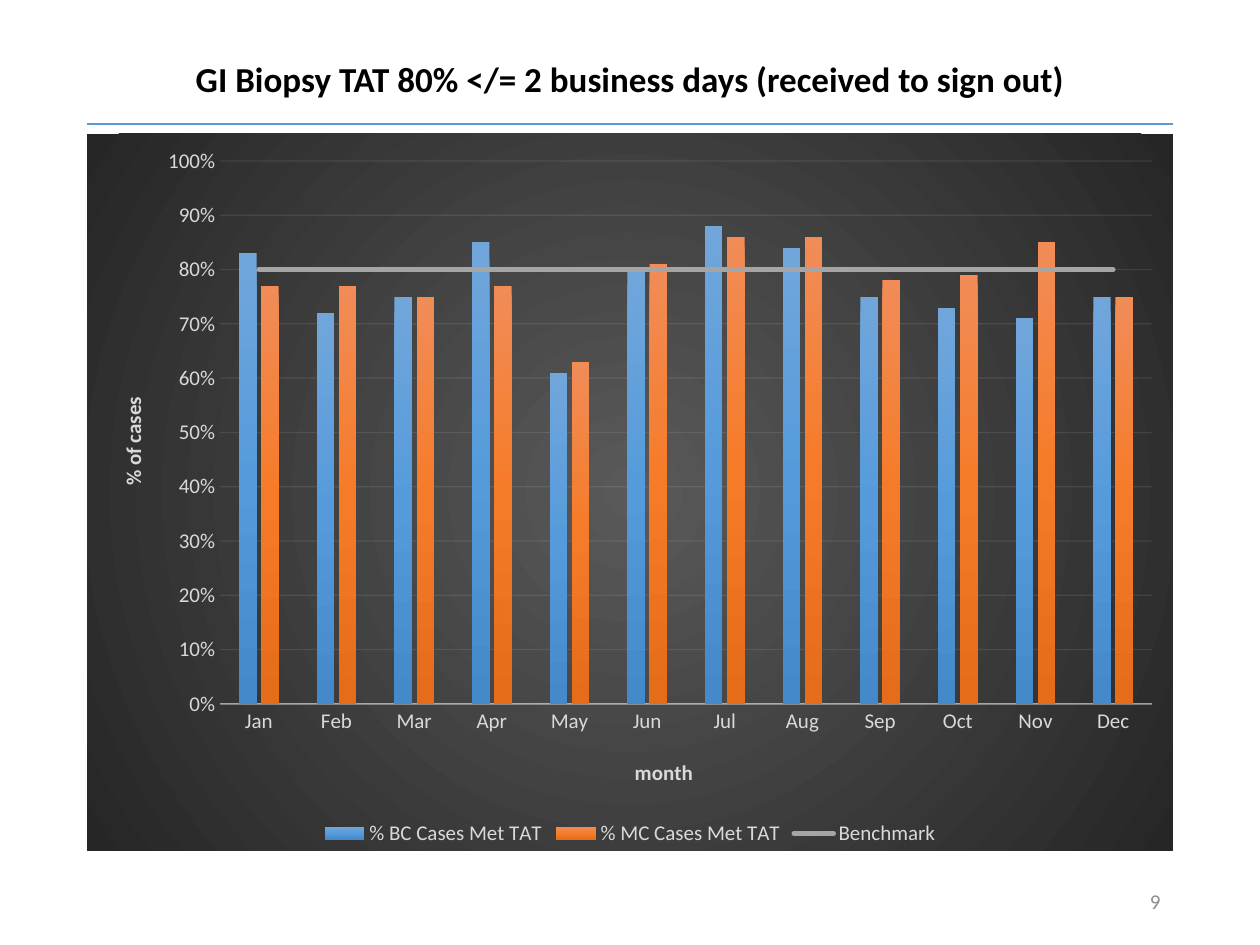
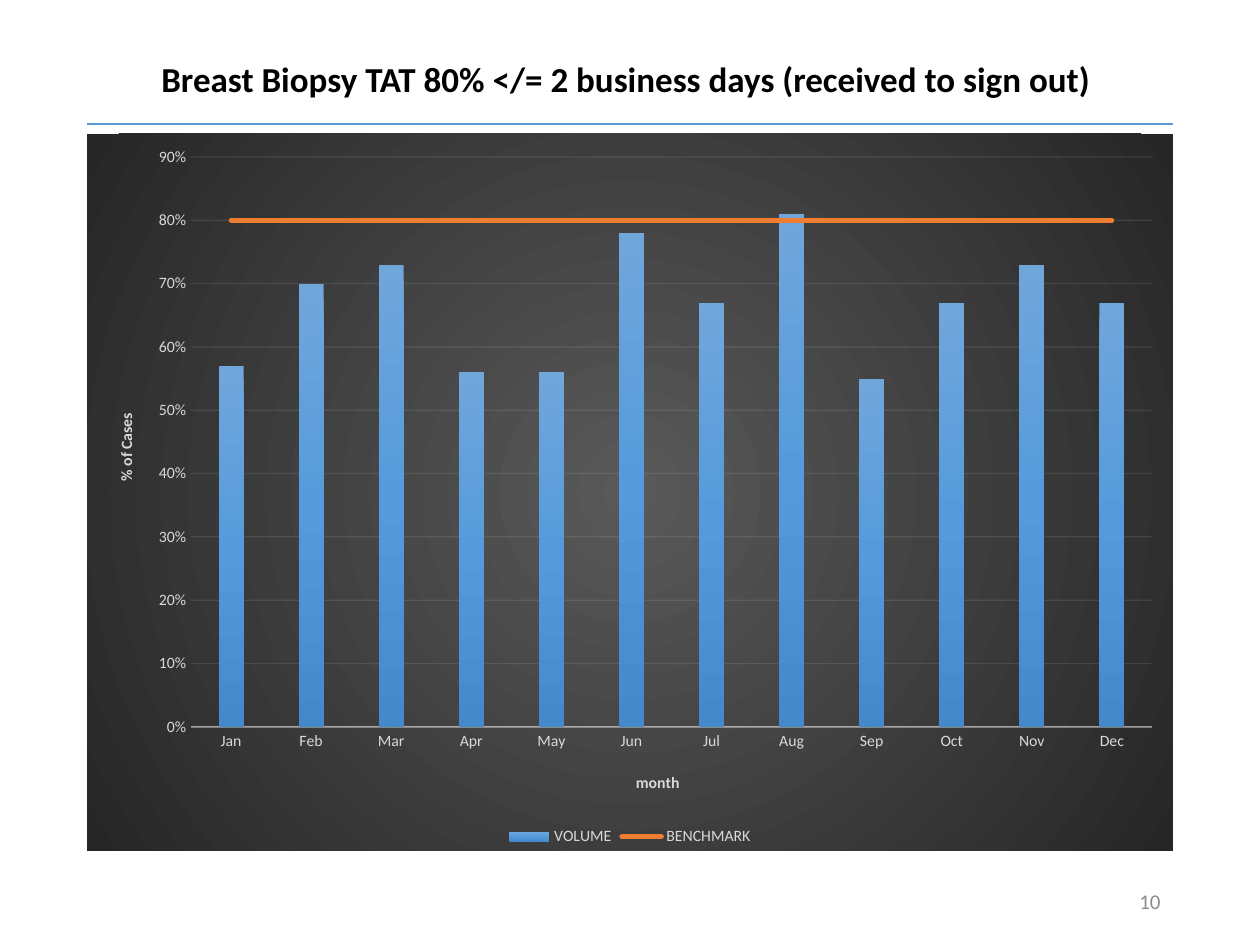
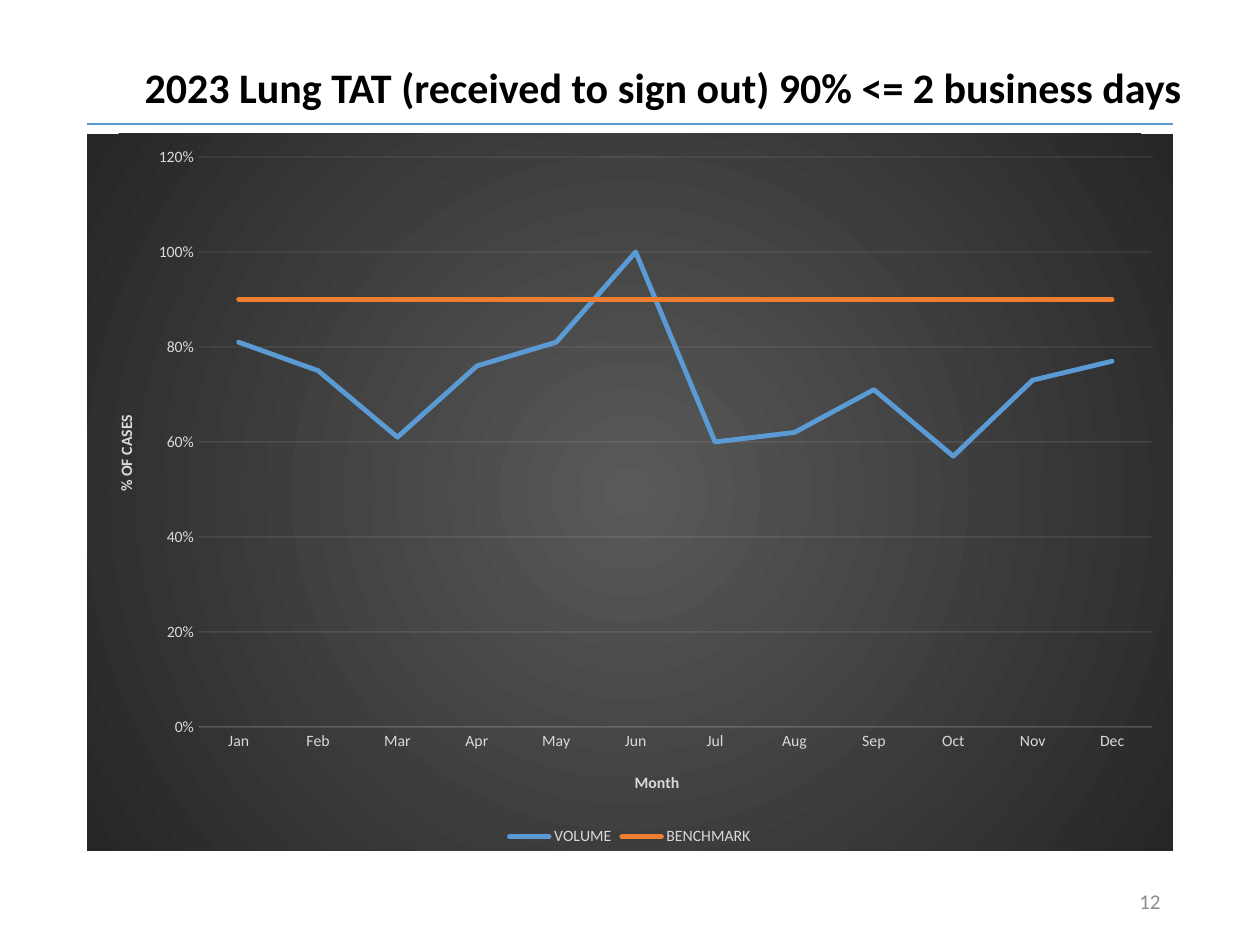
import dataclasses

import pptx
import pptx.chart.data
import pptx.dml.color
import pptx.enum.chart
import pptx.enum.shapes
import pptx.enum.text
import pptx.oxml
import pptx.oxml.ns
import pptx.util

CHART_TYPE = pptx.enum.chart.XL_CHART_TYPE
ALIGN = pptx.enum.text.PP_ALIGN
MIDDLE = pptx.enum.text.MSO_ANCHOR.MIDDLE
qn = pptx.oxml.ns.qn
PX_PER_INCH = 126
MONTHS = ["Jan", "Feb", "Mar", "Apr", "May", "Jun",
          "Jul", "Aug", "Sep", "Oct", "Nov", "Dec"]


@dataclasses.dataclass(frozen=True)
class Theme:
    font: str = "Calibri"
    title: str = "000000"
    number: str = "8C8C8C"
    rule: str = "5B9BD5"
    chart_text: str = "D9D9D9"
    chart_line: str = "F2F2F2"
    blue: str = "5B9BD5"
    orange: str = "ED7D31"
    gray: str = "A5A5A5"
    backdrop: tuple = ("595959", "262626")
    blue_bars: tuple = ("71A6DB", "559BDB", "448ACA")
    orange_bars: tuple = ("F18C57", "F67B28", "E56C19")
    title_size: int = 20
    large_title_size: int = 24
    number_size: int = 12
    large_label_size: int = 12
    label_size: int = 9
    series_width: float = 2.75
    grid_width: float = 0.75
    grid_opacity: int = 10


THEME = Theme()
TITLE_BOX = (87, 50, 1086, 63)
NUMBER_BOX = (890, 876, 283, 50)
CHART_BOX = (87, 134, 1086, 717)
RULE_Y = 124


@dataclasses.dataclass
class ChartLook:
    """Places are px on the page: plot is left, top, right, bottom."""
    label_size: int
    plot: tuple
    month_title: tuple
    value_title: tuple
    maximum: float
    step: float
    axis_width: float = 1
    axis_opacity: int = 54


def px(length):
    return round(length * 914400 / PX_PER_INCH)


def rgb(colour):
    return pptx.dml.color.RGBColor.from_string(colour)


def style_font(font, size, colour, bold=False):
    font.name = THEME.font
    font.size = pptx.util.Pt(size)
    font.bold = bold
    font.color.rgb = rgb(colour)


def style_line(line, colour, width, opacity=100):
    line.color.rgb = rgb(colour)
    line.width = pptx.util.Pt(width)
    if opacity < 100:
        solid = line._get_or_add_ln().find(".//" + qn("a:srgbClr"))
        solid.append(pptx.oxml.parse_xml(
            f'<a:alpha {pptx.oxml.ns.nsdecls("a")} val="{opacity * 1000}"/>'))


def gradient(colours, direction):
    """Return a gradFill with evenly spaced stops and the given direction XML."""
    last = len(colours) - 1
    stops = "".join(
        f'<a:gs pos="{100000 * index // last}"><a:srgbClr val="{colour}"/></a:gs>'
        for index, colour in enumerate(colours))
    return pptx.oxml.parse_xml(
        f'<a:gradFill {pptx.oxml.ns.nsdecls("a")} rotWithShape="1">'
        f'<a:gsLst>{stops}</a:gsLst>{direction}</a:gradFill>')


def set_layout(parent, index, left, top, right=None, bottom=None):
    """Fix a chart part at page px, as fractions of the chart."""
    chart_left, chart_top, chart_width, chart_height = CHART_BOX
    settings = {"xMode": "edge", "yMode": "edge",
                "x": round((left - chart_left) / chart_width, 4),
                "y": round((top - chart_top) / chart_height, 4)}
    target = ""
    if right is not None:
        target = '<c:layoutTarget val="inner"/>'
        settings["w"] = round((right - left) / chart_width, 4)
        settings["h"] = round((bottom - top) / chart_height, 4)
    values = "".join(f'<c:{key} val="{value}"/>' for key, value in settings.items())
    for old in parent.findall(qn("c:layout")):
        parent.remove(old)
    parent.insert(index, pptx.oxml.parse_xml(
        f'<c:layout {pptx.oxml.ns.nsdecls("c")}><c:manualLayout>{target}{values}'
        '</c:manualLayout></c:layout>'))


def add_page(deck, title, number, title_size=THEME.title_size,
             title_box=TITLE_BOX, align=ALIGN.CENTER):
    page = deck.slides.add_slide(deck.slide_layouts[5])
    rule = page.shapes.add_connector(
        pptx.enum.shapes.MSO_CONNECTOR.STRAIGHT,
        px(1173), px(RULE_Y), px(87), px(RULE_Y))
    style_line(rule.line, THEME.rule, 1)
    rule._element.spPr.append(pptx.oxml.parse_xml(
        f'<a:effectLst {pptx.oxml.ns.nsdecls("a")}/>'))

    heading = page.shapes.title
    heading.left, heading.top, heading.width, heading.height = map(px, title_box)
    fill_text(heading.text_frame, title, align, title_size, THEME.title, bold=True)
    heading.text_frame.paragraphs[0].line_spacing = 0.9

    box = page.shapes.add_textbox(*map(px, NUMBER_BOX))
    fill_text(box.text_frame, str(number), ALIGN.RIGHT, THEME.number_size, THEME.number)
    return page


def fill_text(frame, text, align, size, colour, bold=False):
    frame.word_wrap = True
    frame.vertical_anchor = MIDDLE
    para = frame.paragraphs[0]
    para.text = text
    para.alignment = align
    style_font(para.font, size, colour, bold)


def add_chart(page, kind, series, month_title, value_title, look):
    chart_data = pptx.chart.data.CategoryChartData(number_format="0%")
    chart_data.categories = MONTHS
    for name, values in series:
        chart_data.add_series(name, values)
    chart = page.shapes.add_chart(kind, *map(px, CHART_BOX), chart_data).chart
    chart.has_title = False
    style_font(chart.font, look.label_size, THEME.chart_text)
    chart.has_legend = True
    chart.legend.position = pptx.enum.chart.XL_LEGEND_POSITION.BOTTOM
    chart.legend.include_in_layout = False
    style_font(chart.legend.font, look.label_size, THEME.chart_text)
    chart.plots[0].vary_by_categories = False

    fill_backdrop(chart)
    style_axis(chart.category_axis, month_title, look.month_title, look.label_size)
    style_line(chart.category_axis.format.line, THEME.chart_line,
               look.axis_width, look.axis_opacity)
    style_value_axis(chart.value_axis, value_title, look)
    set_layout(chart.element.find(".//" + qn("c:plotArea")), 0, *look.plot)
    return chart


def fill_backdrop(chart):
    area = pptx.oxml.parse_xml(
        f'<c:spPr {pptx.oxml.ns.nsdecls("c", "a")}><a:ln><a:noFill/></a:ln></c:spPr>')
    area.insert(0, gradient(
        THEME.backdrop,
        '<a:path path="circle"><a:fillToRect l="50000" t="50000" r="50000" b="50000"/>'
        '</a:path>'))
    chart.element.find(qn("c:chart")).addnext(area)


def style_axis(axis, title, title_place, size):
    axis.major_tick_mark = pptx.enum.chart.XL_TICK_MARK.NONE
    axis.minor_tick_mark = pptx.enum.chart.XL_TICK_MARK.NONE
    style_font(axis.tick_labels.font, size, THEME.chart_text)
    para = axis.axis_title.text_frame.paragraphs[0]
    para.text = title
    style_font(para.font, size, THEME.chart_text, bold=True)
    set_layout(axis.axis_title._element, 1, *title_place)


def style_value_axis(axis, title, look):
    style_axis(axis, title, look.value_title, look.label_size)
    body = axis.axis_title._element.find(".//" + qn("a:bodyPr"))
    body.set("rot", "-5400000")
    body.set("vert", "horz")
    axis.minimum_scale = 0
    axis.maximum_scale = look.maximum
    axis.major_unit = look.step
    axis.tick_labels.number_format = "0%"
    axis.tick_labels.number_format_is_linked = False
    axis.format.line.fill.background()
    axis.has_major_gridlines = True
    style_line(axis.major_gridlines.format.line, THEME.chart_line,
               THEME.grid_width, THEME.grid_opacity)


def style_bars(plot, gradients):
    plot.gap_width = 219
    plot.overlap = -27
    for series, colours in zip(plot.series, gradients):
        series._element.get_or_add_spPr().insert(
            0, gradient(colours, '<a:lin ang="5400000" scaled="0"/>'))


def style_lines(plot, colours):
    for series, colour in zip(plot.series, colours):
        style_line(series.format.line, colour, THEME.series_width)
        series.format.line._get_or_add_ln().set("cap", "rnd")
        series.marker.style = pptx.enum.chart.XL_MARKER_STYLE.NONE
        series.smooth = False


def turn_last_series_into_line(chart):
    bars = chart.element.find(".//" + qn("c:barChart"))
    benchmark = bars.findall(qn("c:ser"))[-1]
    for flag in benchmark.findall(qn("c:invertIfNegative")):
        benchmark.remove(flag)
    axis_ids = "".join(f'<c:axId val="{item.get("val")}"/>'
                       for item in bars.findall(qn("c:axId")))
    lines = pptx.oxml.parse_xml(
        f'<c:lineChart {pptx.oxml.ns.nsdecls("c")}><c:grouping val="standard"/>'
        f'<c:varyColors val="0"/><c:marker val="1"/>{axis_ids}</c:lineChart>')
    lines.insert(2, benchmark)
    bars.addnext(lines)


def add_bars_with_benchmark(page, series, titles, look, gradients, line_colour):
    chart = add_chart(page, CHART_TYPE.COLUMN_CLUSTERED, series, *titles, look)
    turn_last_series_into_line(chart)
    bars, lines = chart.plots
    style_bars(bars, gradients)
    style_lines(lines, [line_colour])


def benchmark(name, level):
    return name, [level] * len(MONTHS)


def add_gi_page(deck):
    page = add_page(deck, "GI Biopsy TAT 80% </= 2 business days (received to sign out)", 9)
    series = [
        ("% BC Cases Met TAT",
         [0.83, 0.72, 0.75, 0.85, 0.61, 0.8, 0.88, 0.84, 0.75, 0.73, 0.71, 0.75]),
        ("% MC Cases Met TAT",
         [0.77, 0.77, 0.75, 0.77, 0.63, 0.81, 0.86, 0.86, 0.78, 0.79, 0.85, 0.75]),
        benchmark("Benchmark", 0.8),
    ]
    look = ChartLook(THEME.large_label_size, plot=(220, 161, 1152, 704),
                     month_title=(631, 754), value_title=(115, 393),
                     maximum=1, step=0.1)
    add_bars_with_benchmark(page, series, ("month", "% of cases"), look,
                            [THEME.blue_bars, THEME.orange_bars], THEME.gray)


def add_breast_page(deck):
    page = add_page(
        deck, "Breast Biopsy TAT 80% </= 2 business days (received to sign out) ", 10)
    series = [
        ("VOLUME", [0.57, 0.7, 0.73, 0.56, 0.56, 0.78, 0.67, 0.81, 0.55, 0.67, 0.73, 0.67]),
        benchmark("BENCHMARK", 0.8),
    ]
    look = ChartLook(THEME.label_size, plot=(191, 157, 1152, 727),
                     month_title=(633, 769), value_title=(113, 410),
                     maximum=0.9, step=0.1)
    add_bars_with_benchmark(page, series, ("month", "% of Cases"), look,
                            [THEME.blue_bars], THEME.orange)


def add_lung_page(deck):
    page = add_page(deck, "2023 Lung TAT (received to sign out) 90% <= 2 business days", 12,
                    THEME.large_title_size, (132, 58, 1086, 63), ALIGN.LEFT)
    series = [
        ("VOLUME", [0.81, 0.75, 0.61, 0.76, 0.81, 1, 0.6, 0.62, 0.71, 0.57, 0.73, 0.77]),
        benchmark("BENCHMARK", 0.9),
    ]
    look = ChartLook(THEME.label_size, plot=(199, 157, 1152, 727),
                     month_title=(632, 769), value_title=(113, 412),
                     maximum=1.2, step=0.2,
                     axis_width=THEME.grid_width, axis_opacity=THEME.grid_opacity)
    chart = add_chart(page, CHART_TYPE.LINE, series, "Month", "% OF CASES", look)
    style_lines(chart.plots[0], [THEME.blue, THEME.orange])


def main():
    deck = pptx.Presentation()
    deck.slide_width, deck.slide_height = px(1260), px(945)
    add_gi_page(deck)
    add_breast_page(deck)
    add_lung_page(deck)
    deck.save("out.pptx")


if __name__ == "__main__":
    main()
